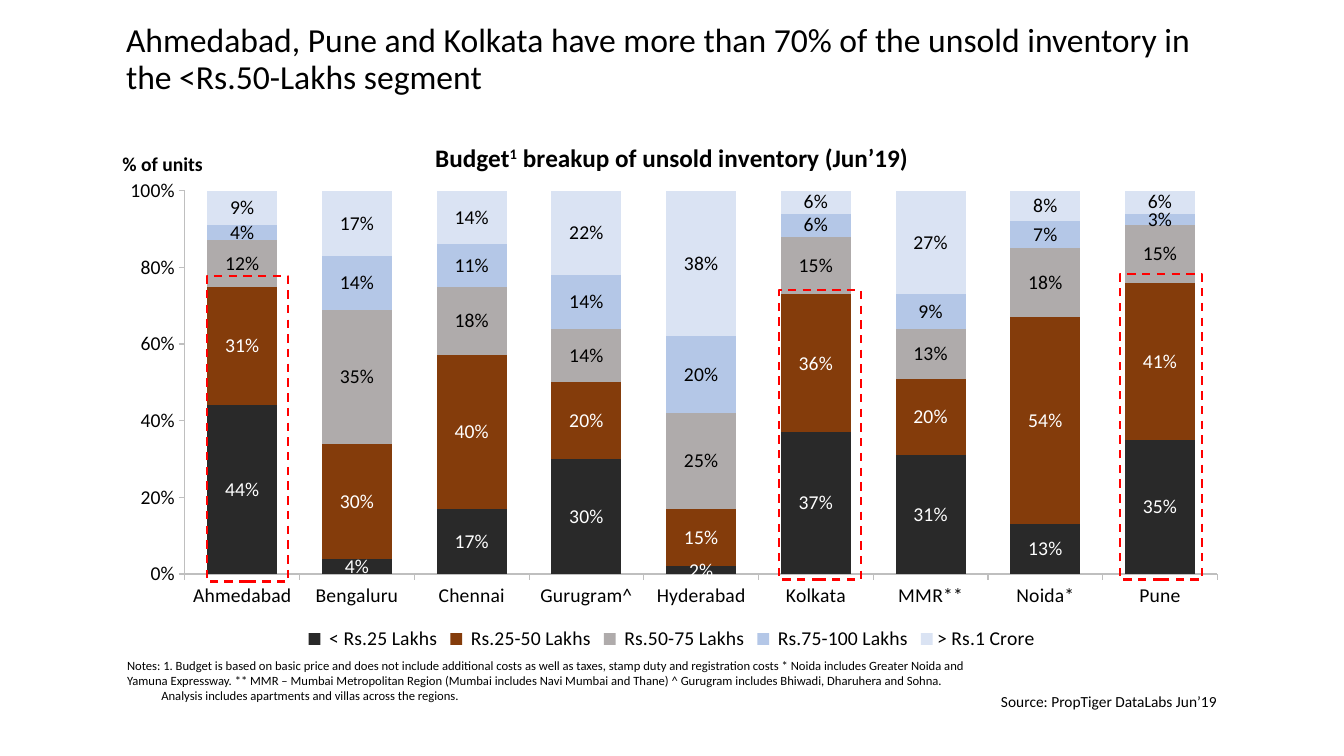
from lxml.etree import SubElement
from pptx import Presentation
from pptx.chart.data import CategoryChartData
from pptx.dml.color import RGBColor
from pptx.enum.chart import XL_CHART_TYPE, XL_LABEL_POSITION, XL_LEGEND_POSITION, XL_TICK_MARK
from pptx.enum.dml import MSO_LINE
from pptx.enum.shapes import MSO_SHAPE
from pptx.enum.text import MSO_ANCHOR, PP_ALIGN
from pptx.oxml.ns import qn
from pptx.util import Inches, Pt

FONT = "Calibri"
COLORS = {"text": "000000", "on_dark": "FFFFFF", "axis": "BFBFBF", "highlight": "FF0000"}
CITIES = ["Ahmedabad", "Bengaluru", "Chennai", "Gurugram^", "Hyderabad",
          "Kolkata", "MMR**", "Noida*", "Pune"]
# Budget band: fill, label colour, share of units in percent by city
BUDGETS = {
    " < Rs.25 Lakhs": ("292929", "on_dark", [44, 4, 17, 30, 2, 37, 31, 13, 35]),
    " Rs.25-50 Lakhs": ("843C0B", "on_dark", [31, 30, 40, 20, 15, 36, 20, 54, 41]),
    " Rs.50-75 Lakhs": ("AFABAB", "text", [12, 35, 18, 14, 25, 15, 13, 18, 15]),
    " Rs.75-100 Lakhs": ("B4C7E7", "text", [4, 14, 11, 14, 20, 6, 9, 7, 3]),
    "> Rs.1 Crore": ("DAE3F3", "text", [9, 17, 14, 22, 38, 6, 27, 8, 6]),
}
# Left, top and height of each marked city, measured from the chart's corner
HIGHLIGHTS = [(0.8, 1.53, 3.03), (6.48, 1.67, 2.87), (9.86, 1.51, 3.03)]
NOTES = [
    "Notes: 1. Budget is based on basic price and does not include additional costs as well as "
    "taxes, stamp duty and registration costs * Noida includes Greater Noida and Yamuna "
    "Expressway. ** MMR – Mumbai Metropolitan Region (Mumbai includes Navi Mumbai and Thane) "
    "^ Gurugram includes Bhiwadi, Dharuhera and Sohna.",
    "Analysis includes apartments and villas across the regions.",
]


def rgb(value):
    return RGBColor.from_string(COLORS.get(value, value))


def set_font(font, size, color="text", bold=False):
    font.name, font.size, font.bold = FONT, Pt(size), bold
    font.color.rgb = rgb(color)


def write(paragraph, text, size, bold=False, align=None, spacing=None, raised=False):
    run = paragraph.add_run()
    run.text = text
    set_font(run.font, size, bold=bold)
    if align is not None:
        paragraph.alignment = align
    if spacing:
        paragraph.line_spacing = spacing
    if raised:
        run._r.get_or_add_rPr().set("baseline", "30000")


def add_box(slide, box):
    frame = slide.shapes.add_textbox(*map(Inches, box)).text_frame
    frame.word_wrap = True
    return frame


def add_headline(slide, box):
    headline = slide.shapes.title
    headline.left, headline.top, headline.width, headline.height = map(Inches, box)
    headline.text_frame.vertical_anchor = MSO_ANCHOR.MIDDLE
    write(headline.text_frame.paragraphs[0],
          "Ahmedabad, Pune and Kolkata have more than 70% of the unsold inventory "
          "in the <Rs.50-Lakhs segment", 24, align=PP_ALIGN.LEFT, spacing=0.9)


def place_plot(chart, **fractions):
    plot_area = chart._chartSpace.chart.plotArea
    for previous in plot_area.findall(qn("c:layout")):
        plot_area.remove(previous)
    layout = SubElement(plot_area, qn("c:layout"))
    plot_area.insert(0, layout)
    manual = SubElement(layout, qn("c:manualLayout"))
    settings = {"layoutTarget": "inner", "xMode": "edge", "yMode": "edge", **fractions}
    for tag, value in settings.items():
        SubElement(manual, qn(f"c:{tag}")).set("val", str(value))


def add_budget_chart(slide, box):
    budget_data = CategoryChartData(number_format="0%")
    budget_data.categories = CITIES
    for name, (_, _, shares) in BUDGETS.items():
        budget_data.add_series(name, [share / 100 for share in shares])
    chart = slide.shapes.add_chart(XL_CHART_TYPE.COLUMN_STACKED, *map(Inches, box),
                                   budget_data).chart
    set_font(chart.font, 14)
    place_plot(chart, x=0.054, y=0.129, w=0.946, h=0.719)

    # Title with its raised note number
    chart.has_title = True
    chart.chart_title.include_in_layout = False
    heading = chart.chart_title.text_frame.paragraphs[0]
    write(heading, "Budget", 18, bold=True)
    write(heading, "1", 18, bold=True, raised=True)
    write(heading, " breakup of unsold inventory (Jun’19)", 18, bold=True)

    # Axes and legend
    for axis in (chart.category_axis, chart.value_axis):
        axis.has_major_gridlines = False
        axis.major_tick_mark = XL_TICK_MARK.OUTSIDE
        axis.minor_tick_mark = XL_TICK_MARK.NONE
        axis.format.line.color.rgb = rgb("axis")
        axis.format.line.width = Pt(0.75)
    shares_axis = chart.value_axis
    shares_axis.minimum_scale, shares_axis.maximum_scale = 0, 1
    shares_axis.major_unit = 0.2
    shares_axis.tick_labels.number_format = "0%"
    shares_axis.tick_labels.number_format_is_linked = False
    chart.has_legend = True
    chart.legend.position = XL_LEGEND_POSITION.BOTTOM
    chart.legend.include_in_layout = False

    # Budget bands
    columns = chart.plots[0]
    columns.gap_width, columns.overlap, columns.vary_by_categories = 64, 100, False
    for band, (fill, label_color, _) in zip(columns.series, BUDGETS.values()):
        band.format.fill.solid()
        band.format.fill.fore_color.rgb = rgb(fill)
        labels = band.data_labels
        labels.show_value = True
        labels.position = XL_LABEL_POSITION.CENTER
        labels.number_format, labels.number_format_is_linked = "0%", False
        set_font(labels.font, 14, label_color)


def add_highlights(slide, box):
    for left, top, height in HIGHLIGHTS:
        city_frame = slide.shapes.add_shape(
            MSO_SHAPE.RECTANGLE, Inches(box[0] + left), Inches(box[1] + top),
            Inches(0.81), Inches(height))
        city_frame.shadow.inherit = False
        city_frame.fill.background()
        city_frame.line.color.rgb = rgb("highlight")
        city_frame.line.width = Pt(1.5)
        city_frame.line.dash_style = MSO_LINE.DASH


def add_notes(slide, box):
    frame = add_box(slide, box)
    frame.margin_left = 0
    frame.vertical_anchor = MSO_ANCHOR.MIDDLE
    write(frame.paragraphs[0], NOTES[0], 9)
    analysis = frame.add_paragraph()
    analysis._p.get_or_add_pPr().set("marL", str(Inches(0.34)))
    write(analysis, NOTES[1], 9)


def main():
    deck = Presentation()
    deck.slide_width, deck.slide_height = Inches(13.33), Inches(7.5)
    slide = deck.slides.add_slide(deck.slide_layouts[5])
    chart_box = (1.25, 1.21, 10.83, 5.29)
    add_headline(slide, (1.15, 0.31, 11.07, 0.57))
    write(add_box(slide, (0.74, 1.46, 1.79, 0.34)).paragraphs[0], "% of units ", 14,
          bold=True, align=PP_ALIGN.CENTER)
    add_budget_chart(slide, chart_box)
    add_highlights(slide, chart_box)
    add_notes(slide, (1.26, 6.47, 8.45, 0.56))
    write(add_box(slide, (9.83, 6.82, 3.43, 0.29)).paragraphs[0],
          "Source: PropTiger DataLabs Jun’19", 11)
    deck.save("out.pptx")


if __name__ == "__main__":
    main()
